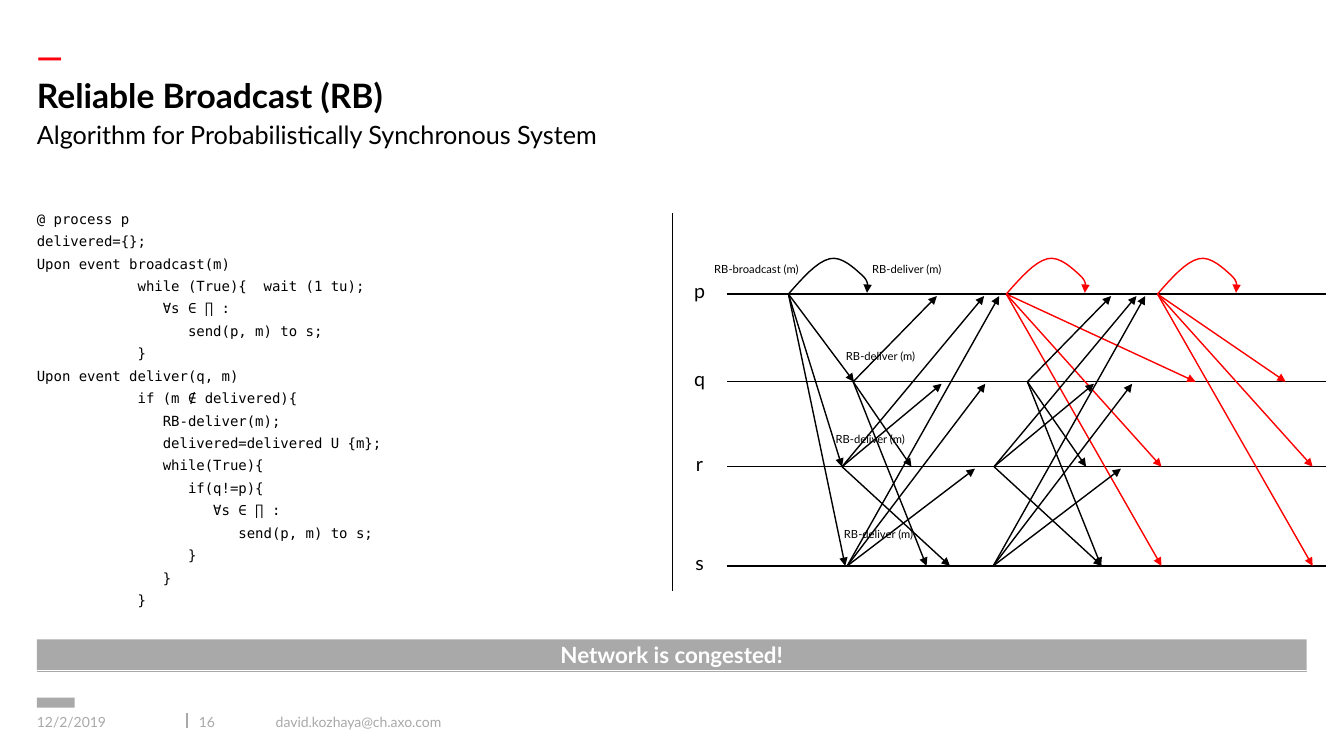
from lxml.etree import SubElement
from pptx import Presentation
from pptx.dml.color import RGBColor
from pptx.enum.shapes import MSO_CONNECTOR as LINE, MSO_SHAPE as SHAPE
from pptx.enum.text import MSO_ANCHOR as ANCHOR, PP_ALIGN as ALIGN
from pptx.oxml.ns import qn
from pptx.util import Cm, Pt

BLACK, WHITE, GREY, RED = "000000", "FFFFFF", "A9A9A9", "FF0000"
SANS, MONO = "Lato", "DejaVu Sans Mono"

CODE = """@ process p
delivered={};
Upon event broadcast(m)
\twhile (True){  wait (1 tu);
\t   ∀s ∈ ∏ :
\t      send(p, m) to s;
\t}
Upon event deliver(q, m)
\tif (m ∉ delivered){
\t   RB-deliver(m);
\t   delivered=delivered U {m};
\t   while(True){
\t      if(q!=p){
\t         ∀s ∈ ∏ :
\t            send(p, m) to s;
\t      }
\t   }
\t}"""

# Diagram data in cm, relative to the diagram box
LANES = {"p": 1.02, "q": 3.23, "r": 5.37, "s": 7.87}
BURSTS = [  # sender, start x, end x per receiver, colour
    ("p", 2.76, {"q": 4.41, "r": 4.11, "s": 4.19}, BLACK),
    ("q", 4.39, {"p": 6.5, "r": 5.86, "s": 6.24}, BLACK),
    ("r", 4.11, {"p": 7.69, "q": 6.62, "s": 6.83}, BLACK),
    ("s", 4.24, {"p": 8.07, "q": 7.72, "r": 7.46}, BLACK),
    ("p", 8.25, {"q": 13.02, "r": 12.16, "s": 12.16}, RED),
    ("p", 12.06, {"q": 15.29, "r": 15.97, "s": 15.97}, RED),
    ("q", 8.78, {"p": 10.89, "r": 10.26, "s": 10.64}, BLACK),
    ("r", 7.94, {"p": 11.53, "q": 10.46, "s": 10.66}, BLACK),
    ("s", 7.92, {"p": 11.75, "q": 11.42, "r": 11.14}, BLACK),
]
EVENTS = [
    ("RB-broadcast (m)", 0.69, 0.05),
    ("RB-deliver (m)", 4.67, 0.06),
    ("RB-deliver (m)", 4.01, 2.25),
    ("RB-deliver (m)", 3.75, 4.33),
    ("RB-deliver (m)", 3.96, 6.73),
]
# Bezier segments of the self-delivery loop, relative to its start
LOOP = [
    [(0, 0), (0.36, -0.41), (0.71, -0.81), (1.04, -0.89)],
    [(1.04, -0.89), (1.35, -0.97), (1.7, -0.61), (1.85, -0.48)],
    [(1.85, -0.48), (2.03, -0.33), (2.01, -0.18), (1.98, -0.03)],
]
LOOP_STEPS = 8


def color(hex_string):
    return RGBColor.from_string(hex_string)


def add_tab_stop(para, position):
    stops = SubElement(para._p.get_or_add_pPr(), qn("a:tabLst"))
    SubElement(stops, qn("a:tab"), pos=str(Cm(position)), algn="l")


def write(shape, lines, size, tint=BLACK, bold=False, font=SANS, align=ALIGN.LEFT,
          anchor=ANCHOR.TOP, inset=(0, 0), pitch=None, gap=0, tab=None):
    frame = shape.text_frame
    frame.word_wrap = True
    frame.vertical_anchor = anchor
    frame.margin_left = frame.margin_right = Cm(inset[0])
    frame.margin_top = frame.margin_bottom = Cm(inset[1])
    for index, line in enumerate(lines):
        para = frame.add_paragraph() if index else frame.paragraphs[0]
        para.alignment = align
        para.space_before = Pt(gap if index else 0)
        if pitch:
            para.line_spacing = Pt(pitch)
        if tab:
            add_tab_stop(para, tab)
        span = para.add_run()
        span.text = line
        span.font.name, span.font.size, span.font.bold = font, Pt(size), bold
        span.font.color.rgb = color(tint)


def add_text(page, box, lines, size, **style):
    write(page.shapes.add_textbox(*map(Cm, box)), lines, size, **style)


def add_rect(page, box, fill):
    rect = page.shapes.add_shape(SHAPE.RECTANGLE, *map(Cm, box))
    rect.shadow.inherit = False
    rect.fill.solid()
    rect.fill.fore_color.rgb = color(fill)
    rect.line.fill.background()
    return rect


def style_line(shape, tint, arrow=False):
    shape.line.color.rgb = color(tint)
    shape.line.width = Pt(1)
    if arrow:
        SubElement(shape.element.spPr.find(qn("a:ln")), qn("a:tailEnd"), type="triangle")


def add_line(page, x1, y1, x2, y2, tint=BLACK, arrow=False):
    line = page.shapes.add_connector(LINE.STRAIGHT, Cm(x1), Cm(y1), Cm(x2), Cm(y2))
    style_line(line, tint, arrow)
    SubElement(line.element.spPr, qn("a:effectLst"))


def add_loop(page, left, top, tint):
    points = []
    for a, b, c, d in LOOP:
        for step in range(1, LOOP_STEPS + 1):
            t = step / LOOP_STEPS
            u = 1 - t
            x, y = (u**3 * a[i] + 3 * u * u * t * b[i] + 3 * u * t * t * c[i] + t**3 * d[i]
                    for i in (0, 1))
            points.append((Cm(left + x), Cm(top + y)))
    builder = page.shapes.build_freeform(Cm(left), Cm(top))
    builder.add_line_segments(points, close=False)
    loop = builder.convert_to_shape()
    loop.shadow.inherit = False
    loop.fill.background()
    style_line(loop, tint, arrow=True)


def add_heading(page, left, top, width):
    add_text(page, (left - 0.26, top, 1.52, 0.43), ["—"], 24, tint="FF000F", bold=True,
             anchor=ANCHOR.MIDDLE, inset=(0.25, 0.13))
    add_text(page, (left, top + 0.7, width, 1.09), ["Reliable Broadcast (RB)"], 24, bold=True)
    add_text(page, (left, top + 1.81, width, 1.4),
             ["Algorithm for Probabilistically Synchronous System"], 18)


def add_code(page, left, top, width, height):
    add_text(page, (left, top, width, height), CODE.split("\n"), 10,
             font=MONO, pitch=10, gap=6, tab=2.54)
    add_line(page, left + width + 0.44, top, left + width + 0.44, top + height)


def add_diagram(page, left, top, width):
    # Process lanes
    for name, y in LANES.items():
        add_line(page, left + 1.21, top + y, left + width, top + y)
        label = add_rect(page, (left, top + y - 0.36, 1.04, 0.56), WHITE)
        label.line.color.rgb = color(WHITE)
        label.line.width = Pt(2)
        write(label, [name], 14, align=ALIGN.CENTER, anchor=ANCHOR.MIDDLE, inset=(0.25, 0.13))
    # Event labels
    for event, x, y in EVENTS:
        add_text(page, (left + x, top + y, 2.77, 0.69), [event], 8, inset=(0.2, 0.2))
    # Messages, with a loop where p delivers to itself
    for sender, start, receivers, tint in BURSTS:
        y = LANES[sender]
        for receiver, end in receivers.items():
            stop = LANES[receiver] + (0.05 if LANES[receiver] < y else 0)
            add_line(page, left + start, top + y, left + end, top + stop, tint, arrow=True)
        if sender == "p":
            add_loop(page, left + start, top + y, tint)


def add_banner(page, left, top, width):
    banner = add_rect(page, (left, top, width, 0.77), GREY)
    write(banner, ["Network is congested!"], 16, tint=WHITE, bold=True,
          align=ALIGN.CENTER, anchor=ANCHOR.MIDDLE)
    add_line(page, left, top + 0.81, left + width, top + 0.81, GREY)


def add_footer(page, left, top):
    add_rect(page, (left, top, 0.95, 0.25), GREY)
    for text, x, width in (("12/2/2019", 0, 3.23), ("16", 4.08, 1.88),
                           ("david.kozhaya@ch.axo.com", 6.02, 23.6)):
        add_text(page, (left + x, top + 0.45, width, 0.33), [text], 10, tint=GREY,
                 anchor=ANCHOR.MIDDLE)
    add_line(page, left + 3.78, top + 0.4, left + 3.78, top + 0.76, GREY)


def main():
    deck = Presentation()
    deck.slide_width, deck.slide_height = Cm(33.87), Cm(19.05)
    page = deck.slides.add_slide(deck.slide_layouts[6])
    add_heading(page, 0.93, 1.19, 32)
    add_code(page, 0.93, 5.37, 15.57, 9.53)
    add_diagram(page, 17.11, 6.39, 16.31)
    add_banner(page, 0.93, 16.11, 32)
    add_footer(page, 0.93, 17.58)
    deck.save("out.pptx")


if __name__ == "__main__":
    main()
